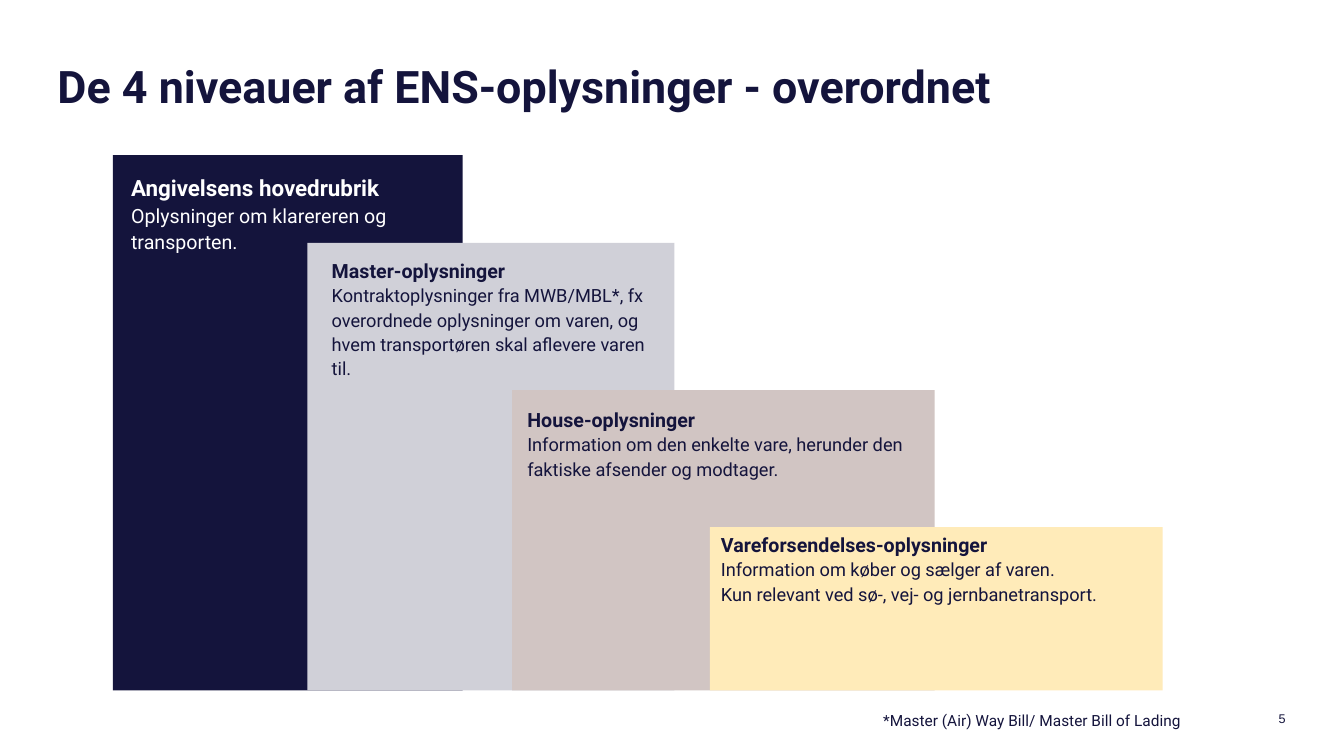
from dataclasses import dataclass

from pptx import Presentation
from pptx.dml.color import RGBColor
from pptx.enum import shapes, text
from pptx.util import Inches, Pt


@dataclass(frozen=True)
class Theme:
    navy: str = "14143C"
    white: str = "FFFFFF"
    grey: str = "D0D0D8"
    taupe: str = "D1C5C3"
    yellow: str = "FFEBB9"
    font: str = "Roboto"
    number_font: str = "Arial"
    title: int = 32
    main_heading: int = 16
    heading: int = 14
    body: int = 13
    footnote: int = 11
    number: int = 9
    line_spacing: float = 1.11


THEME = Theme()
STAIR_BOTTOM = 6.85


def add_text(parent, box, paragraphs, color=THEME.navy, font=THEME.font,
             spacing=THEME.line_spacing, align=text.PP_ALIGN.LEFT,
             anchor=text.MSO_ANCHOR.TOP):
    """Each paragraph is a list of runs: (words, size, bold)."""
    frame = parent.add_textbox(*map(Inches, box)).text_frame
    frame.word_wrap = True
    frame.vertical_anchor = anchor
    frame.margin_left = frame.margin_right = 0
    frame.margin_top = frame.margin_bottom = 0
    for index, runs in enumerate(paragraphs):
        paragraph = frame.add_paragraph() if index else frame.paragraphs[0]
        paragraph.alignment = align
        paragraph.line_spacing = spacing
        for words, size, bold in runs:
            run = paragraph.add_run()
            run.text = words
            run.font.name = font
            run.font.size = Pt(size)
            run.font.bold = bold
            run.font.color.rgb = RGBColor.from_string(color)


def add_level(slide, panel, fill, label_box, paragraphs, color=THEME.navy):
    """A step of the staircase, from (left, top, width) down to the shared base."""
    left, top, width = panel
    level = slide.shapes.add_group_shape().shapes
    step = level.add_shape(shapes.MSO_SHAPE.RECTANGLE, Inches(left), Inches(top),
                           Inches(width), Inches(STAIR_BOTTOM - top))
    step.shadow.inherit = False
    step.fill.solid()
    step.fill.fore_color.rgb = RGBColor.from_string(fill)
    step.line.fill.background()
    add_text(level, label_box, paragraphs, color)


def described(heading, *lines):
    return [[(heading, THEME.heading, True)],
            *([(line, THEME.body, False)] for line in lines)]


def main():
    deck = Presentation()
    deck.slide_width, deck.slide_height = Inches(13.33), Inches(7.5)
    slide = deck.slides.add_slide(deck.slide_layouts[6])

    add_text(slide.shapes, (0.57, 0.65, 12.2, 0.57),
             [[("De 4 niveauer af ENS-oplysninger - overordnet", THEME.title, True)]],
             spacing=0.89)

    add_level(slide, (1.12, 1.54, 3.47), THEME.navy, (1.3, 1.7, 3.25, 0.8),
              [[("Angivelsens hovedrubrik ", THEME.main_heading, True),
                ("Oplysninger om klarereren og transporten.", THEME.heading, False)]],
              THEME.white)
    add_level(slide, (3.05, 2.41, 3.64), THEME.grey, (3.29, 2.54, 3.25, 1.21),
              described("Master-oplysninger",
                        "Kontraktoplysninger fra MWB/MBL*, fx overordnede oplysninger "
                        "om varen, og hvem transportøren skal aflevere varen til."))
    add_level(slide, (5.08, 3.87, 4.19), THEME.taupe, (5.23, 4.02, 3.99, 0.72),
              described("House-oplysninger",
                        "Information om den enkelte vare, herunder den faktiske "
                        "afsender og modtager."))
    add_level(slide, (7.04, 5.23, 4.49), THEME.yellow, (7.15, 5.26, 4.23, 0.72),
              described("Vareforsendelses-oplysninger",
                        "Information om køber og sælger af varen.",
                        "Kun relevant ved sø-, vej- og jernbanetransport."))

    add_text(slide.shapes, (8.76, 7.03, 3.22, 0.19),
             [[("*Master (Air) Way Bill/ Master Bill of Lading", THEME.footnote, False)]])
    add_text(slide.shapes, (11.05, 7.02, 1.7, 0.18), [[("5", THEME.number, False)]],
             font=THEME.number_font, spacing=1.0, align=text.PP_ALIGN.RIGHT,
             anchor=text.MSO_ANCHOR.BOTTOM)

    deck.save("out.pptx")


if __name__ == "__main__":
    main()
